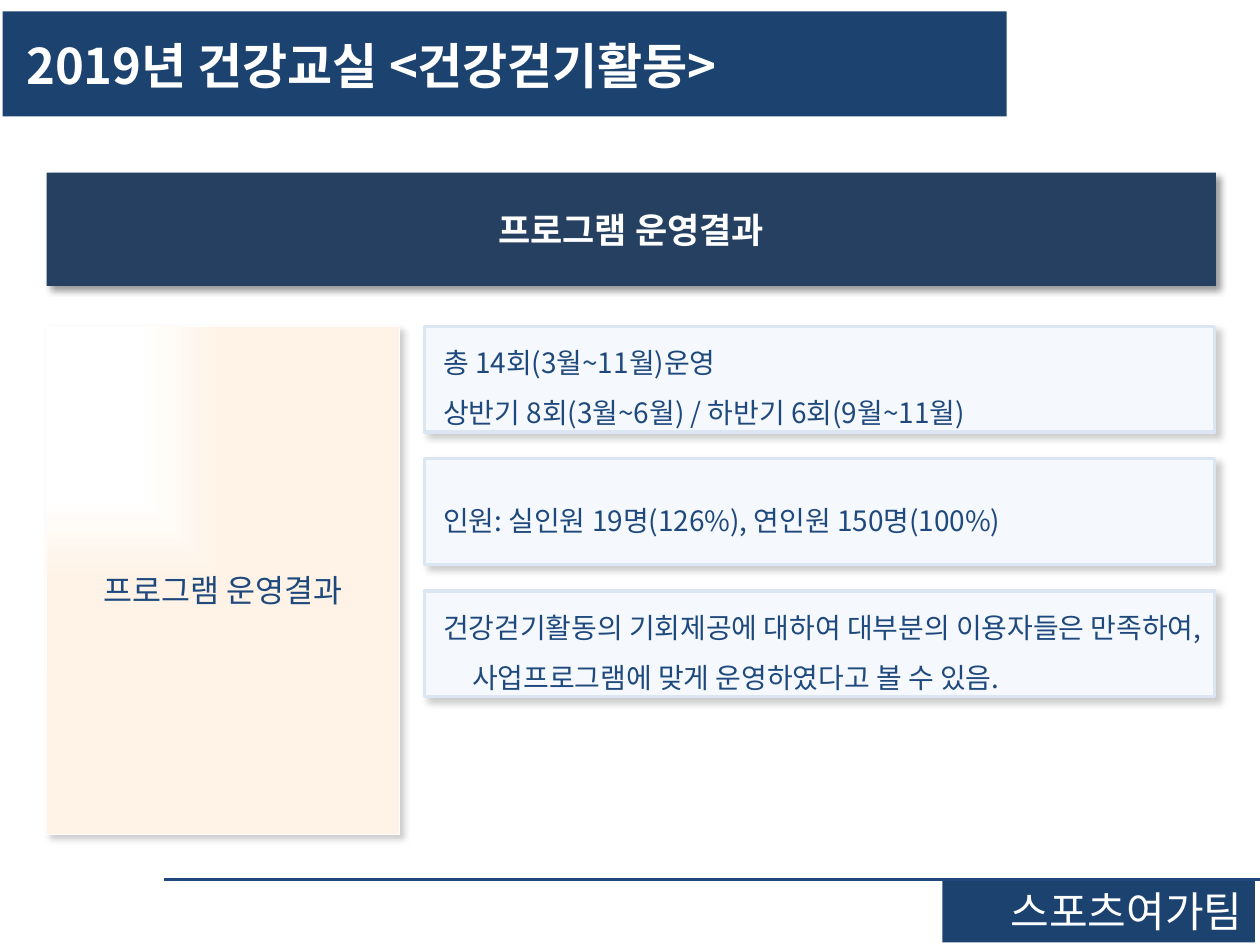
from dataclasses import dataclass

from lxml.etree import SubElement
from pptx import Presentation
from pptx.dml.color import RGBColor
from pptx.enum.shapes import MSO_CONNECTOR, MSO_SHAPE
from pptx.enum.text import MSO_ANCHOR, MSO_AUTO_SIZE, PP_ALIGN
from pptx.oxml import parse_xml
from pptx.oxml.ns import nsdecls, qn
from pptx.util import Inches, Pt


@dataclass(frozen=True)
class Theme:
    font: str = "Noto Sans CJK KR"
    bar: str = "1C4270"
    banner: str = "254061"
    text: str = "1F497D"
    white: str = "FFFFFF"
    card: str = "F5F9FD"
    card_line: str = "DCE6F2"
    panel: str = "FEF3E6"
    panel_line: str = "FFFCFA"
    title_size: int = 28
    team_size: int = 24
    banner_size: int = 20
    panel_size: int = 18
    card_size: int = 16


THEME = Theme()


def color(value):
    return RGBColor.from_string(value)


def place(shape, box):
    shape.left, shape.top, shape.width, shape.height = map(Inches, box)


def add_box(slide, box, fill, line=None, line_width=0):
    shape = slide.shapes.add_shape(MSO_SHAPE.RECTANGLE, *map(Inches, box))
    shape.shadow.inherit = False
    shape.fill.solid()
    shape.fill.fore_color.rgb = color(fill)
    if line:
        shape.line.color.rgb = color(line)
        shape.line.width = Pt(line_width)
    else:
        shape.line.fill.background()
    return shape


def add_shadow(shape, opacity):
    effects = shape._element.spPr.find(qn("a:effectLst"))
    effects.append(parse_xml(
        f'<a:outerShdw {nsdecls("a")} blurRad="{Pt(4)}" dist="{Pt(3)}" dir="2700000" '
        f'algn="tl" rotWithShape="0"><a:srgbClr val="000000">'
        f'<a:alpha val="{opacity * 1000}"/></a:srgbClr></a:outerShdw>'))


def write(shape, lines, size, text_color, align=PP_ALIGN.LEFT, bold=False,
          spacing=None, anchor=MSO_ANCHOR.MIDDLE):
    frame = shape.text_frame
    frame.word_wrap = True
    frame.vertical_anchor = anchor
    frame.text = "\n".join(lines)
    for paragraph in frame.paragraphs:
        paragraph.alignment = align
        if spacing:
            paragraph.line_spacing = spacing
        for run in paragraph.runs:
            run.font.name = THEME.font
            run.font.size = Pt(size)
            run.font.bold = bold
            run.font.color.rgb = color(text_color)
            east_asian = SubElement(run.font._element, qn("a:ea"))
            east_asian.set("typeface", THEME.font)
            run.font._element.find(qn("a:latin")).addnext(east_asian)


def fit_bar_text(shape):
    """Let the bar follow its text, with half a line of space above."""
    shape.text_frame.auto_size = MSO_AUTO_SIZE.SHAPE_TO_FIT_TEXT
    paragraph = shape.text_frame.paragraphs[0]
    paragraph.space_before = Pt(0)
    before = paragraph._p.pPr.find(qn("a:spcBef"))
    before.remove(before[0])
    SubElement(before, qn("a:spcPct")).set("val", "50000")


def build_title(slide, box):
    title = slide.shapes.title
    place(title, box)
    title.fill.solid()
    title.fill.fore_color.rgb = color(THEME.bar)
    write(title, [" 2019년 건강교실 <건강걷기활동>"], THEME.title_size, THEME.white,
          bold=True, spacing=1.3, anchor=MSO_ANCHOR.TOP)
    fit_bar_text(title)


def build_banner(slide, box):
    banner = add_box(slide, box, THEME.banner)
    add_shadow(banner, 40)
    write(banner, ["프로그램 운영결과"], THEME.banner_size, THEME.white,
          PP_ALIGN.CENTER, bold=True)


def build_panel(slide, box):
    panel = add_box(slide, box, THEME.panel, THEME.panel_line, 0.5)
    add_shadow(panel, 20)
    # Rectangular gradient from the upper left corner
    solid = panel._element.spPr.find(qn("a:solidFill"))
    solid.getparent().replace(solid, parse_xml(
        f'<a:gradFill {nsdecls("a")} rotWithShape="1"><a:gsLst>'
        f'<a:gs pos="53000"><a:srgbClr val="{THEME.white}"/></a:gs>'
        f'<a:gs pos="100000"><a:srgbClr val="{THEME.panel}"/></a:gs></a:gsLst>'
        f'<a:path path="rect"><a:fillToRect r="100000" b="100000"/></a:path></a:gradFill>'))
    write(panel, ["프로그램 운영결과"], THEME.panel_size, THEME.text,
          PP_ALIGN.CENTER, spacing=1.5)


def build_cards(slide, box):
    left, top, width, height = box
    gap = 0.21
    cards = [
        ([" 총 14회(3월~11월)운영", " 상반기 8회(3월~6월) / 하반기 6회(9월~11월)"], 0.5, -0.5),
        ([" 인원: 실인원 19명(126%), 연인원 150명(100%)"], 0.5, -0.5),
        ([" 건강걷기활동의 기회제공에 대하여 대부분의 이용자들은 만족하여, "
          "사업프로그램에 맞게 운영하였다고 볼 수 있음."], 0.28, -0.39),
    ]
    card_height = (height - gap * (len(cards) - 1)) / len(cards)
    for index, (lines, margin, indent) in enumerate(cards):
        card_top = top + index * (card_height + gap)
        card = add_box(slide, (left, card_top, width, card_height),
                       THEME.card, THEME.card_line, 2)
        add_shadow(card, 20)
        write(card, lines, THEME.card_size, THEME.text, spacing=1.5)
        for paragraph in card.text_frame.paragraphs:
            paragraph.level = 1
            properties = paragraph._p.get_or_add_pPr()
            properties.set("marL", str(Inches(margin)))
            properties.set("indent", str(Inches(indent)))


def build_footer(slide, box):
    left, top, width, height = box
    team_width = 2.48
    team = add_box(slide, (left + width - team_width - 0.04, top, team_width, height),
                   THEME.bar)
    write(team, ["스포츠여가팀"], THEME.team_size, THEME.white, PP_ALIGN.RIGHT,
          anchor=MSO_ANCHOR.TOP)
    fit_bar_text(team)
    rule = slide.shapes.add_connector(
        MSO_CONNECTOR.STRAIGHT, Inches(left + width), Inches(top), Inches(left), Inches(top))
    rule.line.color.rgb = color(THEME.text)
    rule.line.width = Pt(1.5)
    SubElement(rule._element.spPr, qn("a:effectLst"))


def main():
    presentation = Presentation()
    presentation.slide_width, presentation.slide_height = Inches(10), Inches(7.5)
    slide = presentation.slides.add_slide(presentation.slide_layouts[5])
    build_title(slide, (0.02, 0.09, 7.97, 0.71))
    build_banner(slide, (0.37, 1.37, 9.28, 0.9))
    build_panel(slide, (0.37, 2.59, 2.8, 4.03))
    build_cards(slide, (3.37, 2.59, 6.27, 2.94))
    build_footer(slide, (1.3, 6.98, 8.7, 0.5))
    presentation.save("out.pptx")


if __name__ == "__main__":
    main()
